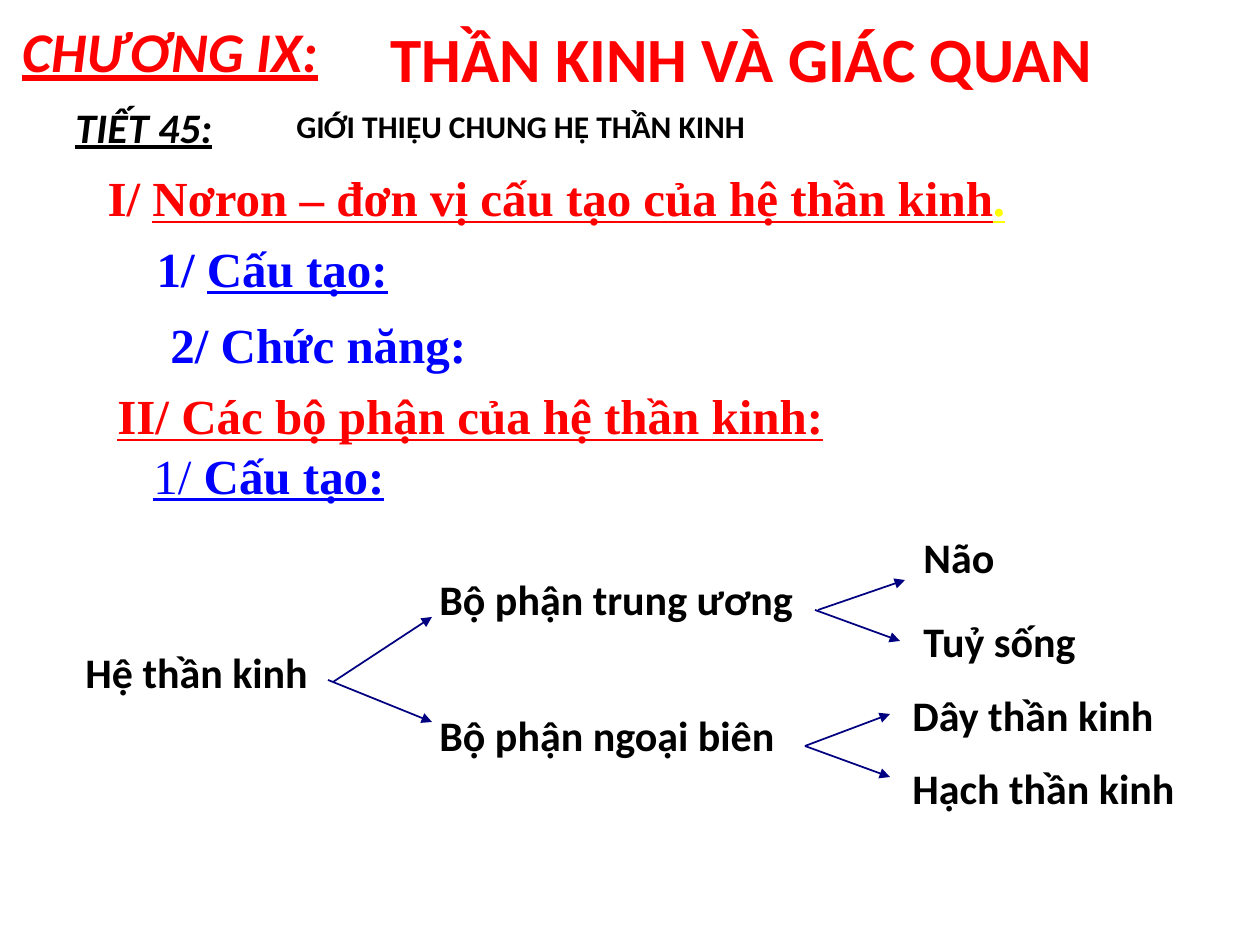
import pptx
import pptx.dml.color
import pptx.enum.dml
import pptx.enum.shapes
import pptx.enum.text
import pptx.oxml
import pptx.oxml.ns
import pptx.util

PX = 914400 / 126
THEME = {
    "red": "FF0000", "blue": "0000FF", "yellow": "FFFF00", "black": "000000", "navy": "000080",
    "sans": "Calibri", "serif": "Times New Roman",
    "title": 36, "chapter": 32, "heading": 28, "label": 24, "lesson": 18,
}


def px(length):
    return pptx.util.Emu(round(length * PX))


def add_run(paragraph, text, color, size, face="sans", **marks):
    run = paragraph.add_run()
    run.text = text
    formats = {"name": THEME[face], "size": pptx.util.Pt(THEME[size]), "bold": True,
               "italic": False, "underline": False, **marks}
    for key, value in formats.items():
        setattr(run.font, key, value)
    run.font.color.rgb = pptx.dml.color.RGBColor.from_string(THEME[color])


lesson_deck = pptx.Presentation()
lesson_deck.slide_width, lesson_deck.slide_height = px(1260), px(945)
slide = lesson_deck.slides.add_slide(lesson_deck.slide_layouts[1])
for footer in list(slide.placeholders)[2:]:
    footer.element.getparent().remove(footer.element)

heading = slide.shapes.title
outline = slide.placeholders[1]
for part, box in ((heading, (378, 13, 882, 88)), (outline, (63, 168, 1218, 624))):
    for key, value in zip(("left", "top", "width", "height"), box):
        setattr(part, key, px(value))
    frame_format = {"auto_size": pptx.enum.text.MSO_AUTO_SIZE.NONE, "word_wrap": True,
                    "vertical_anchor": pptx.enum.text.MSO_ANCHOR.TOP}
    for key, value in frame_format.items():
        setattr(part.text_frame, key, value)

heading_line = heading.text_frame.paragraphs[0]
heading_line.alignment = pptx.enum.text.PP_ALIGN.LEFT
add_run(heading_line, "THẦN KINH VÀ GIÁC QUAN", "red", "title")

section_spacing = {"line_spacing": 0.9, "space_before": pptx.util.Pt(10)}
outline_items = [
    (32, [("I/ ", "red", False), ("Nơron – đơn vị cấu tạo của hệ thần kinh", "red", True),
          (".", "yellow", True)]),
    (81, [("1/ ", "blue", False), ("Cấu tạo:", "blue", True)]),
]
for index, (indent, pieces) in enumerate(outline_items):
    item = outline.text_frame.paragraphs[0] if index == 0 else outline.text_frame.add_paragraph()
    for key, value in section_spacing.items():
        setattr(item, key, value)
    properties = item._p.get_or_add_pPr()
    properties.set("marL", str(px(indent)))
    properties.set("indent", "0")
    properties.append(pptx.oxml.parse_xml(f'<a:buNone {pptx.oxml.ns.nsdecls("a")}/>'))
    for text, color, underlined in pieces:
        add_run(item, text, color, "heading", "serif", underline=underlined)

emphasis = {"italic": True, "underline": True}
serif_underlined = {"face": "serif", "underline": True}
node = ("black", "label", {})
texts = [
    ((10, 10, 494, 79), "CHƯƠNG IX:", "red", "chapter", emphasis),
    ((63, 95, 441, 63), "TIẾT 45:", "black", "label", emphasis),
    ((284, 101, 1134, 72), "GIỚI THIỆU CHUNG HỆ THẦN KINH", "black", "lesson", {}),
    ((158, 315, 924, 67), "2/ Chức năng:", "blue", "heading", {"face": "serif"}),
    ((105, 386, 882, 126), "II/ Các bộ phận của hệ thần kinh:", "red", "heading", serif_underlined),
    ((73, 640, 483, 63), "Hệ thần kinh", *node),
    ((427, 567, 483, 63), "Bộ phận trung ương", *node),
    ((427, 703, 483, 63), "Bộ phận ngoại biên", *node),
    ((911, 525, 483, 63), "Não", *node),
    ((911, 609, 483, 63), "Tuỷ sống", *node),
    ((900, 683, 483, 63), "Dây thần kinh", *node),
    ((900, 756, 483, 63), "Hạch thần kinh", *node),
]
for box, text, color, size, marks in texts:
    frame = slide.shapes.add_textbox(*map(px, box)).text_frame
    frame.word_wrap = True
    frame.auto_size = pptx.enum.text.MSO_AUTO_SIZE.SHAPE_TO_FIT_TEXT
    line = frame.paragraphs[0]
    add_run(line, text, color, size, **marks)
    if size == "heading":
        for key, value in section_spacing.items():
            setattr(line, key, value)
    if text.startswith("II/"):
        structure = frame.add_paragraph()
        structure._p.get_or_add_pPr().append(pptx.oxml.parse_xml(
            f'<a:tabLst {pptx.oxml.ns.nsdecls("a")}><a:tab pos="{px(36)}" algn="l"/></a:tabLst>'))
        add_run(structure, "\t", "blue", "lesson", underline=True, bold=False)
        add_run(structure, "1/ ", "blue", "heading", **serif_underlined, bold=False)
        add_run(structure, "Cấu tạo:", "blue", "heading", **serif_underlined)

branches = [
    (333, 682, 432, 617), (328, 680, 432, 722),
    (818, 610, 905, 580), (815, 610, 900, 641),
    (805, 746, 890, 714), (805, 746, 890, 777),
]
for ends in branches:
    branch = slide.shapes.add_connector(pptx.enum.shapes.MSO_CONNECTOR.STRAIGHT, *map(px, ends))
    branch.line.width = pptx.util.Pt(1)
    branch.line.color.rgb = pptx.dml.color.RGBColor.from_string(THEME["navy"])
    branch.line._get_or_add_ln().append(
        pptx.oxml.parse_xml(f'<a:tailEnd {pptx.oxml.ns.nsdecls("a")} type="triangle"/>'))
    branch.element.spPr.append(pptx.oxml.parse_xml(f'<a:effectLst {pptx.oxml.ns.nsdecls("a")}/>'))

lesson_deck.save("out.pptx")
